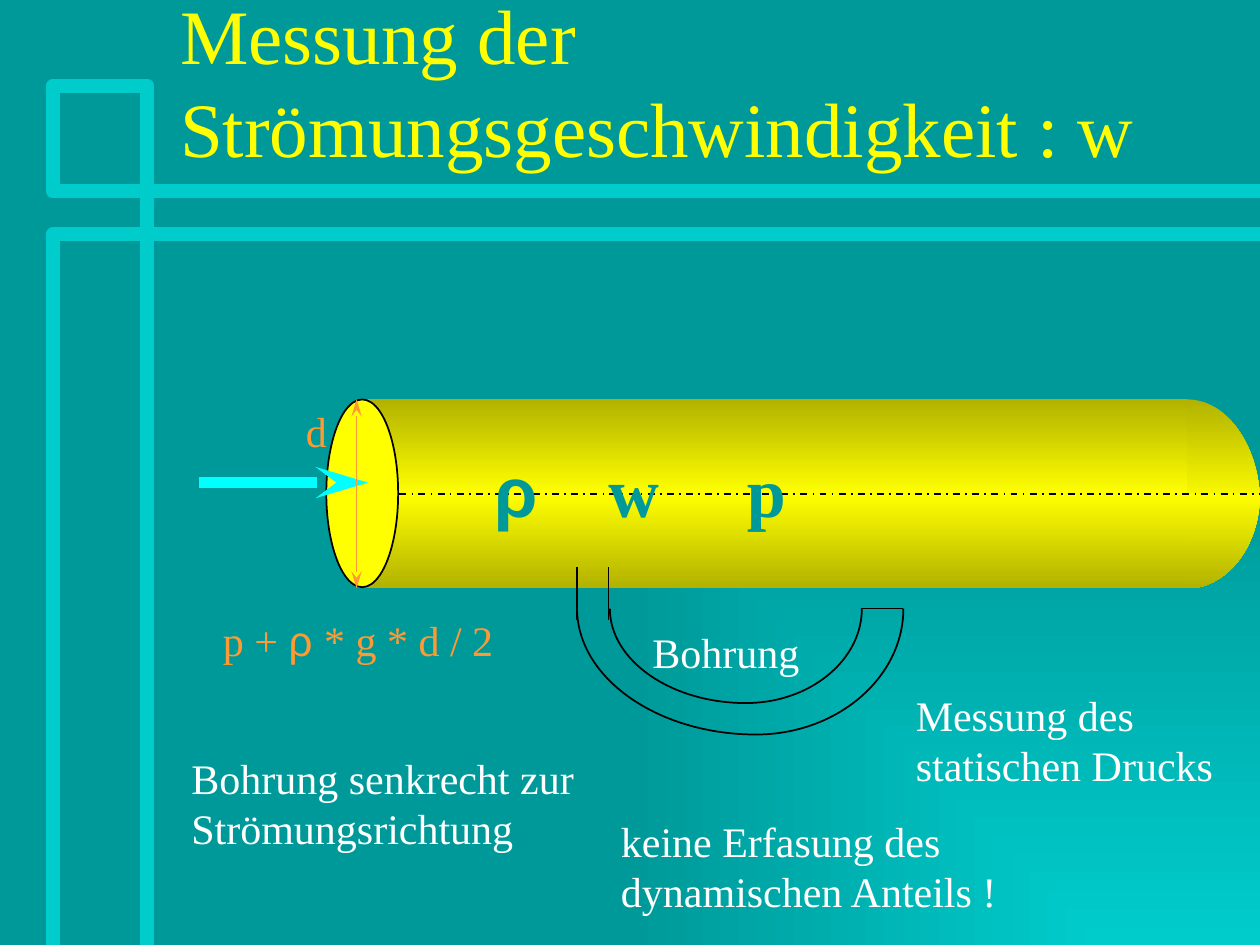
from copy import deepcopy

from lxml.etree import SubElement
from pptx import Presentation
from pptx.dml.color import RGBColor
from pptx.enum.dml import MSO_LINE
from pptx.enum.shapes import MSO_CONNECTOR, MSO_SHAPE
from pptx.enum.text import MSO_ANCHOR, MSO_AUTO_SIZE, PP_ALIGN
from pptx.oxml.ns import qn
from pptx.util import Inches, Pt

colour = RGBColor.from_string
SERIF, SANS = "Times New Roman", "Arial"
TEAL, AQUA, YELLOW, OLIVE = "009999", "00CCCC", "FFFF00", "B2B200"
ORANGE, WHITE, BLACK, CYAN = "FF9933", "FFFFFF", "000000", "00FFFF"
BEND = 0.55  # control point distance for a quarter ellipse

deck = Presentation()
deck.slide_width, deck.slide_height = Inches(10), Inches(7.5)
page = deck.slides.add_slide(deck.slide_layouts[5])


def add_line(start, end, hex_colour, width=1, arrows=()):
    line = page.shapes.add_connector(
        MSO_CONNECTOR.STRAIGHT, *(Inches(v) for v in (*start, *end)))
    line.line.color.rgb = colour(hex_colour)
    line.line.width = Pt(width)
    for arrow in arrows:
        SubElement(line.line._get_or_add_ln(), qn(f"a:{arrow}"),
                   type="stealth", w="med", len="lg")
    SubElement(line._element.spPr, qn("a:effectLst"))
    return line


def add_text(left, top, width, height, runs, hex_colour, size=24, bold=False, tabs=()):
    box = page.shapes.add_textbox(*(Inches(v) for v in (left, top, width, height)))
    box.text_frame.word_wrap = True
    box.text_frame.auto_size = MSO_AUTO_SIZE.SHAPE_TO_FIT_TEXT
    para = box.text_frame.paragraphs[0]
    properties = para._p.get_or_add_pPr()
    SubElement(SubElement(properties, qn("a:spcBef")), qn("a:spcPct"), val="50000")
    if tabs:
        tab_list = SubElement(properties, qn("a:tabLst"))
        for tab in tabs:
            SubElement(tab_list, qn("a:tab"), pos=str(Inches(tab)), algn="l")
    for text, font in runs:
        span = para.add_run()
        span.text = text
        span.font.name, span.font.size, span.font.bold = font, Pt(size), bold
        span.font.color.rgb = colour(hex_colour)


# Background: gradient spreading from the bottom right corner
background = page.background.fill
background.gradient()
for stop, hex_colour in zip(background.gradient_stops, (AQUA, TEAL)):
    stop.color.rgb = colour(hex_colour)
gradient = next(page._element.iter(qn("a:gradFill")))
gradient.remove(gradient.find(qn("a:lin")))
spread = SubElement(gradient, qn("a:path"))
spread.set("path", "rect")
SubElement(spread, qn("a:fillToRect"), l="100000", t="100000", r="0", b="0")

# Decorative frame lines
for points in (
    [(10.02, 1.86), (0.42, 1.86), (0.42, 7.5)],
    [(1.17, 7.5), (1.17, 0.68), (0.42, 0.68), (0.42, 1.52), (10.02, 1.52)],
):
    corners = [(Inches(x), Inches(y)) for x, y in points]
    builder = page.shapes.build_freeform(*corners[0])
    builder.add_line_segments(corners[1:], close=False)
    frame = builder.convert_to_shape()
    frame.fill.background()
    frame.line.color.rgb = colour(AQUA)
    frame.line.width = Pt(8)
    frame.shadow.inherit = False

# Title
title = page.shapes.title
title.left, title.top = Inches(1.33), Inches(0.23)
title.width, title.height = Inches(8.5), Inches(1.19)
title.text_frame.auto_size = MSO_AUTO_SIZE.NONE
title.text_frame.vertical_anchor = MSO_ANCHOR.BOTTOM
para = title.text_frame.paragraphs[0]
para.alignment = PP_ALIGN.LEFT
span = para.add_run()
span.text = "Messung der Strömungsgeschwindigkeit : w"
span.font.name, span.font.size = SERIF, Pt(44)
span.font.color.rgb = colour(YELLOW)

# Pipe body and its open end
pipe = page.shapes.add_shape(
    MSO_SHAPE.RECTANGLE, Inches(2.83), Inches(3.17), Inches(6.59), Inches(1.5))
opening = page.shapes.add_shape(
    MSO_SHAPE.OVAL, Inches(2.59), Inches(3.17), Inches(0.57), Inches(1.49))
opening.fill.solid()
opening.fill.fore_color.rgb = colour(YELLOW)
opening.line.color.rgb = colour(BLACK)
opening.line.width = Pt(1)
opening.shadow.inherit = False

# Quarter ellipses: rounded pipe end (filled) and bent tube (outlines)
# centre x, centre y, reach to the side, reach up or down, gradient
shaded = [(pipe, (OLIVE, YELLOW, OLIVE))]
for cx, cy, rx, ry, shades in (
    (9.42, 4.00, 0.58, -0.83, (OLIVE, YELLOW)),
    (9.42, 3.92, 0.58, 0.75, (YELLOW, OLIVE)),
    (5.92, 4.83, -1.08, 0.75, None),
    (6.00, 4.83, -1.42, 1.00, None),
    (5.92, 4.83, 0.92, 0.75, None),
    (6.00, 4.83, 1.17, 1.00, None),
):
    steps = [(1, 0), (1, BEND), (BEND, 1), (0, 1)] + [(0, 0)] * bool(shades)
    points = [(Inches(cx + rx * u), Inches(cy + ry * v)) for u, v in steps]
    builder = page.shapes.build_freeform(*points[0])
    builder.add_line_segments(points[1:], close=bool(shades))
    quarter = builder.convert_to_shape()
    # Turn the first three segments into one curve
    segments = list(quarter._element.iter(qn("a:lnTo")))[:3]
    curve = SubElement(segments[0].getparent(), qn("a:cubicBezTo"))
    segments[0].addprevious(curve)
    for segment in segments:
        curve.append(segment[0])
        segment.getparent().remove(segment)
    if shades:
        shaded.append((quarter, shades))
    else:
        quarter.fill.background()
        quarter.line.color.rgb = colour(BLACK)
        quarter.line.width = Pt(1)
        quarter.shadow.inherit = False

# Vertical shading of the pipe parts
for shape, shades in shaded:
    shape.fill.gradient()
    shape.fill.gradient_angle = 270
    stop_list = next(shape._element.iter(qn("a:gsLst")))
    while len(stop_list) < len(shades):
        stop_list.append(deepcopy(stop_list[-1]))
    for index, stop in enumerate(shape.fill.gradient_stops):
        stop.position = index / (len(shades) - 1)
        stop.color.rgb = colour(shades[index])
    shape.line.fill.background()
    shape.shadow.inherit = False

# Flow arrow, pipe axis and diameter
add_line((1.58, 3.83), (2.92, 3.83), CYAN, 6, ["tailEnd"])
axis = add_line((3.17, 3.92), (10, 3.92), BLACK)
axis.line.dash_style = MSO_LINE.DASH_DOT
add_line((2.83, 4.67), (2.83, 3.17), ORANGE, 1, ["headEnd", "tailEnd"])

# Straight parts of the tube
for x in (4.58, 4.83):
    add_line((x, 4.5), (x, 4.92), BLACK)
add_line((6.83, 4.83), (7.17, 4.83), BLACK)

# Formula symbols
add_text(2.33, 3.17, 0.5, 0.5, [("d", SERIF)], ORANGE)
add_text(3.83, 3.5, 4.67, 0.77, [("ρ", SANS), ("\tw\tp", SERIF)],
         TEAL, size=40, bold=True, tabs=(0.9, 2))
add_text(1.67, 4.83, 3.25, 0.5,
         [("p + ", SERIF), ("ρ ", SANS), ("* g * d / 2", SERIF)], ORANGE)

# Labels
for left, top, width, height, text in (
    (5.08, 4.92, 1.42, 0.5, "Bohrung"),
    (7.17, 5.42, 2.83, 0.9, "Messung des statischen Drucks"),
    (1.42, 5.92, 3.67, 0.9, "Bohrung senkrecht zur Strömungsrichtung"),
    (4.83, 6.42, 4.42, 0.9, "keine Erfasung des dynamischen Anteils !"),
):
    add_text(left, top, width, height, [(text, SERIF)], WHITE)

deck.save("out.pptx")
